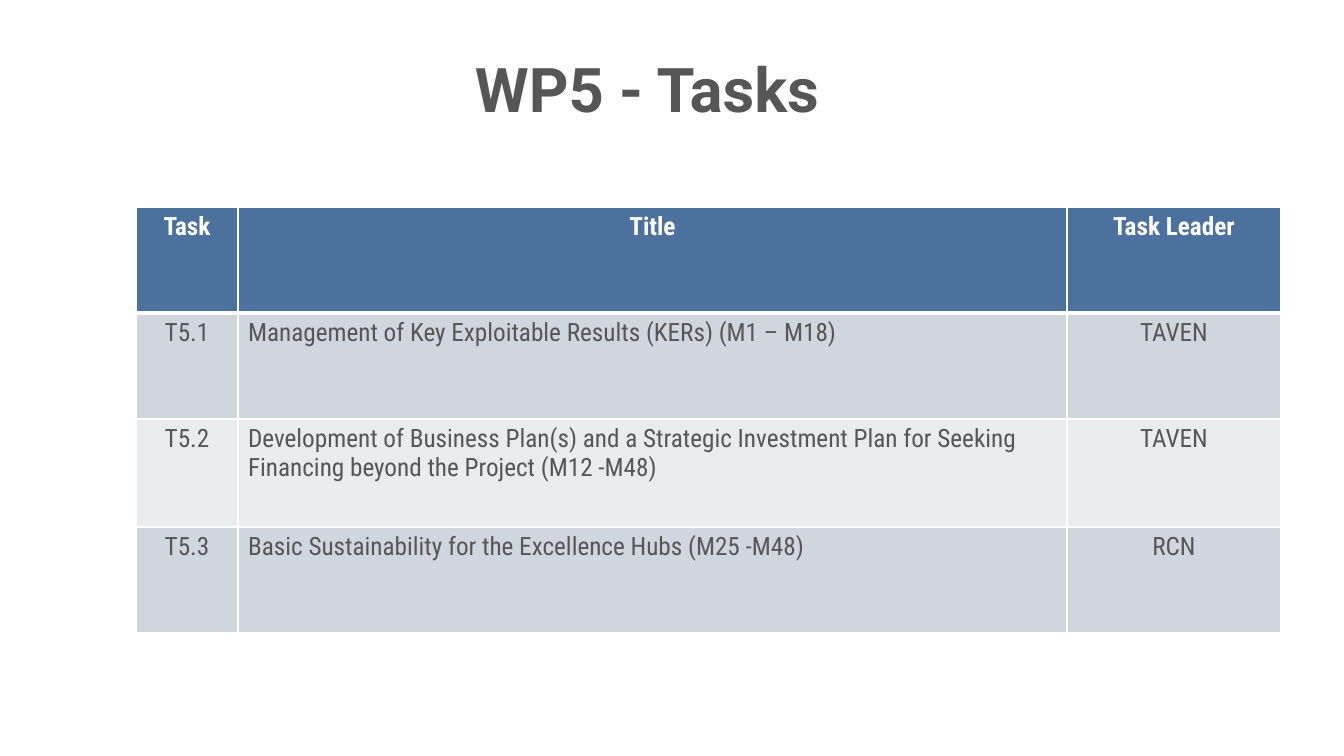
from dataclasses import dataclass

from lxml.etree import SubElement
from pptx import Presentation
from pptx.dml.color import RGBColor as Rgb
from pptx.enum.text import MSO_ANCHOR as Anchor, PP_ALIGN as Align
from pptx.oxml.ns import qn
from pptx.util import Emu, Pt

PX_PER_INCH = 100.8


@dataclass(frozen=True)
class Theme:
    title_font: str = "Roboto"
    table_font: str = "Roboto Condensed"
    title_size: int = 44
    table_size: int = 18
    text: str = "565656"
    white: str = "FFFFFF"
    header: str = "4B719C"
    bands: tuple = ("D0D5DE", "E9EBEF")
    rule: int = 1
    header_rule: int = 3


THEME = Theme()
TITLE_BOX = (465, 31, 413, 100)
TABLE_BOX = (136, 207, 1145, 426)
COLUMN_WIDTHS = (102, 829, 214)
ROW_HEIGHTS = (106, 106, 108, 106)
TASKS = (
    ("Task", "Title", "Task Leader"),
    ("T5.1", "Management of Key Exploitable Results (KERs) (M1 – M18)", "TAVEN"),
    ("T5.2", "Development of Business Plan(s) and a Strategic Investment Plan "
             "for Seeking Financing beyond the Project (M12 -M48)", "TAVEN"),
    ("T5.3", "Basic Sustainability for the Excellence Hubs (M25 -M48)", "RCN"),
)


def px(length):
    return Emu(round(length * 914400 / PX_PER_INCH))


def style(para, font, size, color, bold):
    para.font.name = font
    para.font.size = Pt(size)
    para.font.bold = bold
    para.font.color.rgb = Rgb.from_string(color)


def set_borders(cell, widths):
    """Draw white borders; widths go left, right, top, bottom in points."""
    properties = cell._tc.get_or_add_tcPr()
    for position, (side, width) in enumerate(zip("LRTB", widths)):
        line = SubElement(properties, qn(f"a:ln{side}"), w=str(Pt(width)))
        fill = SubElement(line, qn("a:solidFill"))
        SubElement(fill, qn("a:srgbClr"), val=THEME.white)
        properties.insert(position, line)


def add_title(page, box, text):
    frame = page.shapes.add_textbox(*map(px, box)).text_frame
    frame.word_wrap = True
    frame.vertical_anchor = Anchor.BOTTOM
    para = frame.paragraphs[0]
    para.text = text
    para.line_spacing = 0.9
    style(para, THEME.title_font, THEME.title_size, THEME.text, True)


def add_task_table(page, box, rows):
    table = page.shapes.add_table(len(rows), len(rows[0]), *map(px, box)).table
    for column, width in zip(table.columns, COLUMN_WIDTHS):
        column.width = px(width)
    for row, height in zip(table.rows, ROW_HEIGHTS):
        row.height = px(height)

    for row_index, row in enumerate(rows):
        is_header = row_index == 0
        background = THEME.header if is_header else THEME.bands[(row_index - 1) % 2]
        color = THEME.white if is_header else THEME.text
        top = THEME.header_rule if row_index == 1 else THEME.rule
        bottom = THEME.header_rule if is_header else THEME.rule
        for column_index, text in enumerate(row):
            cell = table.cell(row_index, column_index)
            cell.fill.solid()
            cell.fill.fore_color.rgb = Rgb.from_string(background)
            set_borders(cell, (THEME.rule, THEME.rule, top, bottom))
            para = cell.text_frame.paragraphs[0]
            para.text = text
            # Only the task titles are set to the left
            is_task_title = column_index == 1 and not is_header
            para.alignment = Align.LEFT if is_task_title else Align.CENTER
            style(para, THEME.table_font, THEME.table_size, color, is_header)


def main():
    deck = Presentation()
    deck.slide_width, deck.slide_height = px(1344), px(756)
    page = deck.slides.add_slide(deck.slide_layouts[6])

    # Heading
    add_title(page, TITLE_BOX, "WP5 - Tasks")
    # Tasks and their leaders
    add_task_table(page, TABLE_BOX, TASKS)

    deck.save("out.pptx")


if __name__ == "__main__":
    main()
